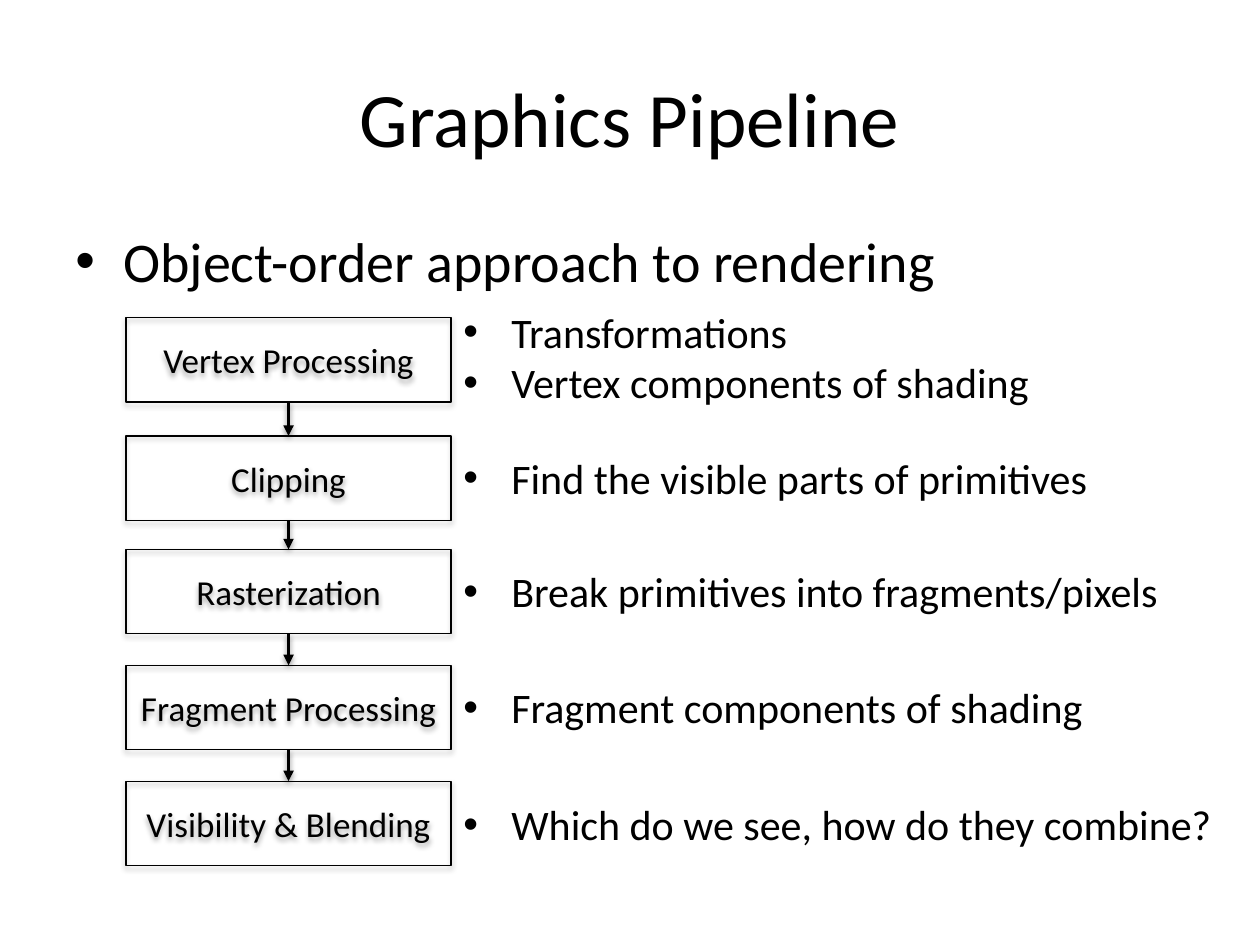
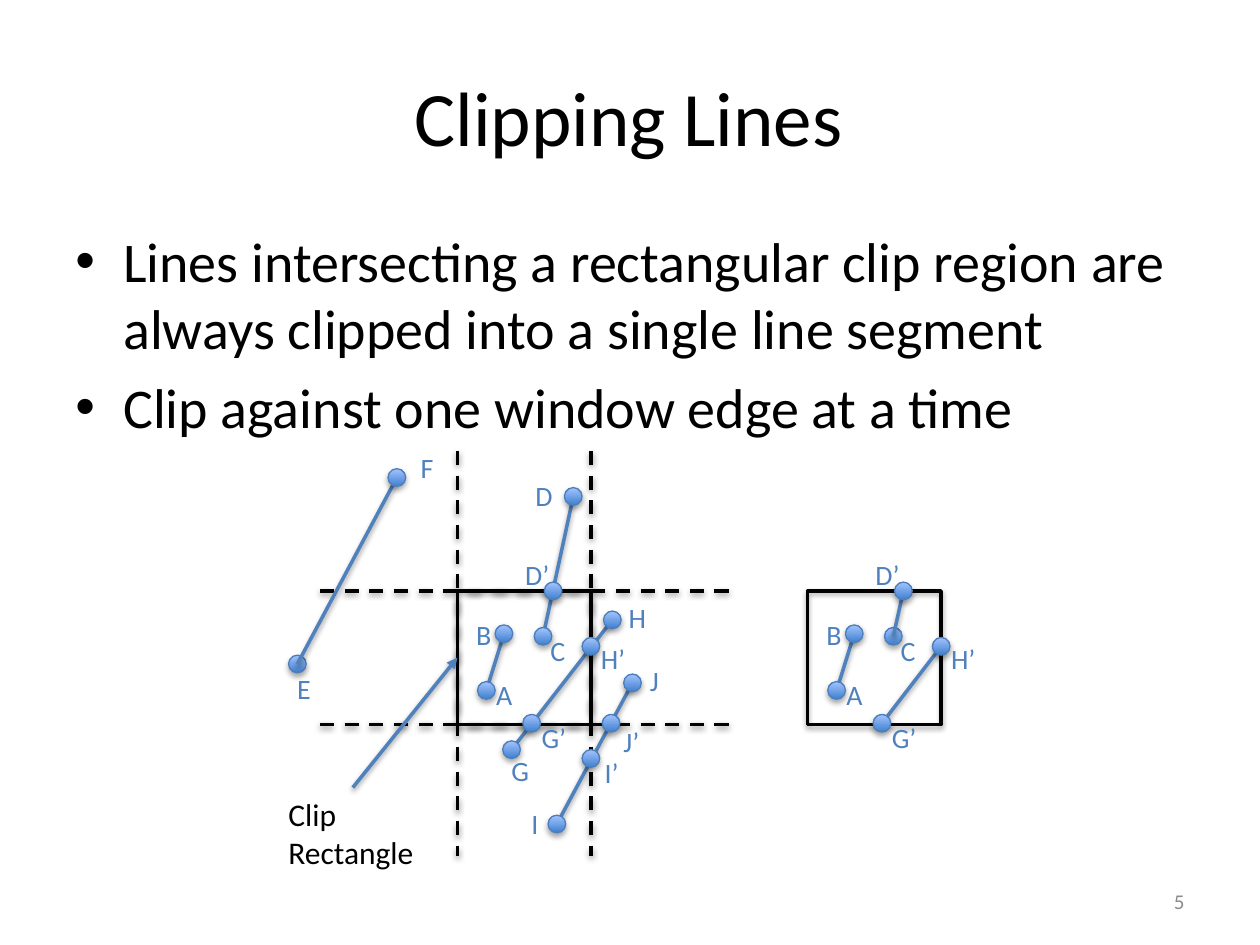
from lxml.etree import SubElement
from pptx import Presentation
from pptx.dml.color import RGBColor
from pptx.enum.dml import MSO_LINE
from pptx.enum.shapes import MSO_CONNECTOR, MSO_SHAPE, MSO_SHAPE_TYPE as SHAPE_TYPE
from pptx.enum.text import MSO_ANCHOR, MSO_AUTO_SIZE, PP_ALIGN
from pptx.oxml.ns import qn
from pptx.util import Pt

PX = 9144  # 100 px to the inch
FONT = "Calibri"
COLORS = {
    "black": "000000",
    "blue": "4F81BD",
    "dot edge": "4B7EBC",
    "dot bottom": "3F80CE",
    "dot top": "A4C4FF",
    "gray": "8C8C8C",
}
RGB = {name: RGBColor.from_string(value) for name, value in COLORS.items()}

MIDDLE = {"word_wrap": True, "vertical_anchor": MSO_ANCHOR.MIDDLE}
GROW = {"word_wrap": True, "auto_size": MSO_AUTO_SIZE.SHAPE_TO_FIT_TEXT}
CENTER = {"alignment": PP_ALIGN.CENTER}
STYLES = {
    "title": {"size": 44, "frame": MIDDLE, "paragraph": CENTER},
    "body": {"size": 32, "frame": {"word_wrap": True},
             "paragraph": {"space_before": Pt(6.4)}, "bullet": True},
    "stage": {"size": 20, "frame": MIDDLE, "paragraph": CENTER},
    "note": {"size": 24, "frame": GROW, "bullet": True},
    "caption": {"size": 18, "frame": GROW},
    "label": {"size": 16, "frame": GROW | {"word_wrap": False}, "color": "blue"},
    "number": {"size": 12, "frame": MIDDLE, "color": "gray",
               "paragraph": {"alignment": PP_ALIGN.RIGHT}},
}


def write_text(slide, style_name, lines, box, shape=None):
    """Write lines into shape, or into a new text box at box (px)."""
    style = STYLES[style_name]
    shape = shape or slide.shapes.add_textbox(*(value * PX for value in box))
    frame = shape.text_frame
    frame.text = "\n".join(lines)
    for name, value in style["frame"].items():
        setattr(frame, name, value)
    for paragraph in frame.paragraphs:
        font = paragraph.runs[0].font
        font.name, font.size = FONT, Pt(style["size"])
        font.color.rgb = RGB[style.get("color", "black")]
        if style.get("bullet"):
            properties = paragraph._p.get_or_add_pPr()
            properties.set("marL", str(38 * PX))
            properties.set("indent", str(-38 * PX))
            SubElement(properties, qn("a:buFont"), typeface="Arial")
            SubElement(properties, qn("a:buChar"), char="•")
        for name, value in style.get("paragraph", {}).items():
            setattr(paragraph, name, value)


def add_line(slide, start, end, color="black", dash=None, arrow=False):
    line = slide.shapes.add_connector(
        MSO_CONNECTOR.STRAIGHT, *(value * PX for value in (*start, *end)))
    line.line.color.rgb = RGB[color]
    line.line.width = Pt(2)
    line.line.dash_style = dash
    if arrow:
        SubElement(line.line._get_or_add_ln(), qn("a:tailEnd"), type="triangle")
    return line


presentation = Presentation()
presentation.slide_width, presentation.slide_height = 1000 * PX, 750 * PX
blank = presentation.slide_layouts[6]

# Both slides: title and bullets
contents = [
    ("Graphics Pipeline", (50, 30, 900, 125), ["Object-order approach to rendering"]),
    ("Clipping Lines", (23, 34, 952, 116), [
        "Lines intersecting a rectangular clip region are always clipped "
        "into a single line segment",
        "Clip against one window edge at a time"]),
]
for title, title_box, bullets in contents:
    slide = presentation.slides.add_slide(blank)
    write_text(slide, "title", [title], title_box)
    write_text(slide, "body", bullets, (50, 175, 900, 490))
pipeline_slide, clipping_slide = presentation.slides

# Pipeline stages: top, name, top of the notes, notes
stages = [
    (252, "Vertex Processing", 238, ["Transformations", "Vertex components of shading"]),
    (346, "Clipping", 354, ["Find the visible parts of primitives"]),
    (436, "Rasterization", 444, ["Break primitives into fragments/pixels"]),
    (528, "Fragment Processing", 536, ["Fragment components of shading"]),
    (620, "Visibility & Blending", 629, ["Which do we see, how do they combine?"]),
]
previous = None
for top, name, note_top, notes in stages:
    box = (100, top, 258, 67)
    stage = pipeline_slide.shapes.add_shape(
        MSO_SHAPE.RECTANGLE, *(value * PX for value in box))
    stage.fill.background()
    stage.line.color.rgb = RGB["black"]
    stage.line.width = Pt(0.75)
    write_text(pipeline_slide, "stage", [name], box, stage)
    write_text(pipeline_slide, "note", notes,
               (358, note_top, 642, 9 + 41 * len(notes)))
    if previous:
        arrow = add_line(pipeline_slide, (229, top - 25), (229, top), arrow=True)
        arrow.begin_connect(previous, 2)
        arrow.end_connect(stage, 0)
    previous = stage

# Clip window, its extended edges and the clipped result
LEFT, TOP, SIDE, SHIFT = 363, 469, 106, 278
write_text(clipping_slide, "number", ["5"], (717, 695, 233, 40))
for x in (LEFT, LEFT + SIDE):
    add_line(clipping_slide, (x, 358), (x, 679), dash=MSO_LINE.DASH)
for y in (TOP, TOP + SIDE):
    add_line(clipping_slide, (254, y), (579, y), dash=MSO_LINE.DASH)
windows = []
for x in (LEFT, LEFT + SHIFT):
    window = clipping_slide.shapes.add_shape(
        MSO_SHAPE.RECTANGLE, x * PX, TOP * PX, SIDE * PX, SIDE * PX)
    window.fill.background()
    window.line.color.rgb = RGB["black"]
    window.line.width = Pt(2)
    windows.append(window)
write_text(clipping_slide, "caption", ["Clip Rectangle"], (219, 626, 122, 71))
pointer = add_line(clipping_slide, (280, 625), (LEFT, TOP + SIDE // 2), "blue", arrow=True)
pointer.end_connect(windows[0], 1)

# Points: centre, then left, top and width of the label
points = {
    "A": ((386, 548), (384, 533, 33)),
    "B": ((400, 503), (368, 485, 33)),
    "C": ((431, 505), (427, 498, 33)),
    "D": ((455, 394), (415, 375, 34)),
    "D’": ((439, 469), (407, 438, 40)),
    "E": ((236, 527), (226, 528, 31)),
    "F": ((315, 379), (324, 353, 31)),
    "G": ((406, 595), (396, 593, 34)),
    "G’": ((422, 574), (420, 567, 40)),
    "H": ((486, 492), (489, 472, 34)),
    "H’": ((469, 513), (467, 504, 40)),
    "I": ((442, 654), (412, 635, 26)),
    "I’": ((469, 602), (470, 595, 31)),
    "J": ((502, 542), (506, 522, 27)),
    "J’": ((485, 574), (485, 570, 33)),
}
# Drawing order, back to front: a hyphen joins two points by a segment
drawings = [
    (0, "A-B B A C-D D C D’ E E-F F G-H G H G’ H’ I-J I J I’ J’"),
    (SHIFT, "A-B B A C C-D’ D’ G’-H’ H’ G’"),
]
for shift, steps in drawings:
    for step in steps.split():
        centers = [(points[name][0][0] + shift, points[name][0][1])
                   for name in step.split("-")]
        if len(centers) == 2:
            add_line(clipping_slide, *centers, "blue")
            continue
        x, y = centers[0]
        dot = clipping_slide.shapes.add_shape(
            MSO_SHAPE.OVAL, (x - 7) * PX, (y - 7) * PX, 14 * PX, 14 * PX)
        dot.fill.gradient()
        dot.fill.gradient_angle = 90
        for stop, color in zip(dot.fill.gradient_stops, ("dot bottom", "dot top")):
            stop.color.rgb = RGB[color]
        dot.line.color.rgb = RGB["dot edge"]
        dot.line.width = Pt(0.75)
        label_left, label_top, label_width = points[step][1]
        write_text(clipping_slide, "label", [step],
                   (label_left + shift, label_top, label_width, 37))

# Soft shadow below every line and shape
for slide in presentation.slides:
    for shape in slide.shapes:
        if shape.shape_type == SHAPE_TYPE.TEXT_BOX:
            continue
        distance, alpha = (20000, 38000) if shape.shape_type == SHAPE_TYPE.LINE else (23000, 35000)
        effects = SubElement(shape.element.spPr, qn("a:effectLst"))
        shadow = SubElement(effects, qn("a:outerShdw"), blurRad="40000",
                            dist=str(distance), dir="5400000", rotWithShape="0")
        shadow_color = SubElement(shadow, qn("a:srgbClr"), val=COLORS["black"])
        SubElement(shadow_color, qn("a:alpha"), val=str(alpha))

presentation.save("out.pptx")
